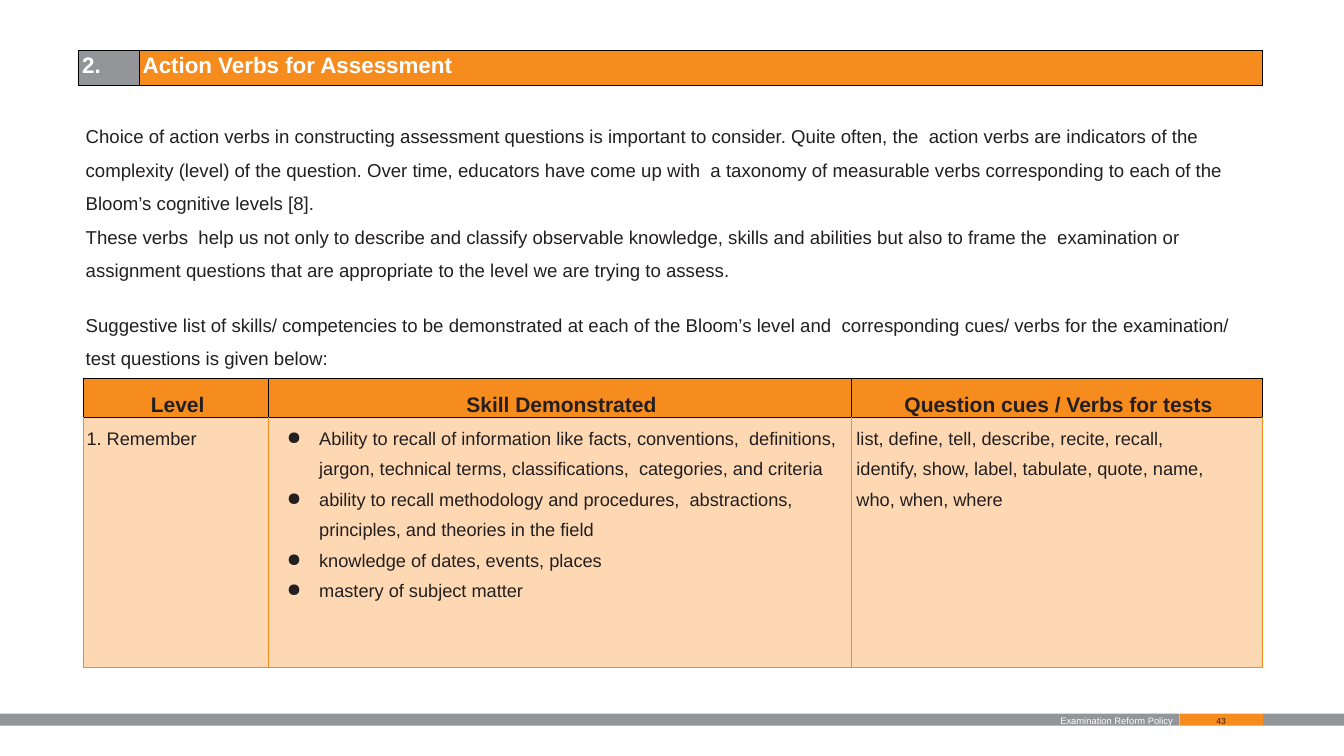
from lxml import etree
from pptx import Presentation
from pptx.dml.color import RGBColor
from pptx.enum import shapes, text
from pptx.oxml import ns
from pptx.util import Pt

# Content
TITLE = ["2.", "Action Verbs for Assessment"]
INTRO = [
    "Choice of action verbs in constructing assessment questions is important to consider. "
    "Quite often, the  action verbs are indicators of the complexity (level) of the question. "
    "Over time, educators have come up with  a taxonomy of measurable verbs corresponding to "
    "each of the Bloom’s cognitive levels [8].",
    "These verbs  help us not only to describe and classify observable knowledge, skills and "
    "abilities but also to frame the  examination or assignment questions that are appropriate "
    "to the level we are trying to assess.",
    "Suggestive list of skills/ competencies to be demonstrated at each of the Bloom’s level and "
    " corresponding cues/ verbs for the examination/ test questions is given below:",
]
HEADERS = ["Level", "Skill Demonstrated", "Question cues / Verbs for tests"]
LEVEL = ["1. Remember"]
SKILLS = [
    "Ability to recall of information like facts, conventions,  definitions, jargon, "
    "technical terms, classifications,  categories, and criteria",
    "ability to recall methodology and procedures,  abstractions, principles, and theories "
    "in the field",
    "knowledge of dates, events, places",
    "mastery of subject matter",
]
CUES = [
    "list, define, tell, describe, recite, recall,",
    "identify, show, label, tabulate, quote, name,",
    "who, when, where",
]
FOOTER, PAGE = "Examination Reform Policy", "43"

ORANGE = RGBColor(0xF6, 0x8B, 0x1E)
PEACH = RGBColor(0xFE, 0xD8, 0xB3)
GREY = RGBColor(0x93, 0x95, 0x98)
INK = RGBColor(0x23, 0x1F, 0x20)
WHITE = RGBColor(0xFF, 0xFF, 0xFF)
BLACK = RGBColor(0, 0, 0)

# Layout, in points
WIDTH, HEIGHT = 960, 540
RIGHT = 902
PAGE_X, BAR_Y, BAR_H = 842.5, 509.8, 8.6
LEFT, ALIGN = 59.8, text.PP_ALIGN

prs = Presentation()
prs.slide_width, prs.slide_height = Pt(WIDTH), Pt(HEIGHT)
s = prs.slides.add_slide(prs.slide_layouts[6])


def write(tf, lines, size, color, bold=False, font="Arial", align=ALIGN.LEFT,
          spacing=1.0, margin=0, hang=0, bullet=None):
    tf.word_wrap = True
    for i, line in enumerate(lines):
        p = tf.paragraphs[0] if i == 0 else tf.add_paragraph()
        p.text, p.alignment, p.line_spacing = line, align, spacing
        f = p.font
        f.name, f.size, f.bold = font, Pt(size), bold
        f.color.rgb = color
        pPr = p._p.get_or_add_pPr()
        pPr.set("marL", str(Pt(margin)))
        pPr.set("indent", str(Pt(-hang)))
        if bullet:
            mark = etree.Element(ns.qn("a:buChar"), char=bullet)
            pPr.insert_element_before(mark, "a:tabLst", "a:defRPr", "a:extLst")


def add_text(x, y, w, h, lines, size, color, top=0, anchor=text.MSO_ANCHOR.MIDDLE, **style):
    tf = s.shapes.add_textbox(Pt(x), Pt(y), Pt(w), Pt(h)).text_frame
    tf.margin_left = tf.margin_right = tf.margin_bottom = 0
    tf.margin_top = Pt(top)
    tf.vertical_anchor = anchor
    write(tf, lines, size, color, **style)
    return tf


def add_table(x, y, widths, heights):
    frame = s.shapes.add_table(len(heights), len(widths), Pt(x), Pt(y),
                               Pt(sum(widths)), Pt(sum(heights)))
    table = frame.table
    table.first_row = table.horz_banding = False
    for column, w in zip(table.columns, widths):
        column.width = Pt(w)
    for row, h in zip(table.rows, heights):
        row.height = Pt(h)
    return table


def fill_cell(cell, lines, size, color, fill, borders, top,
              anchor=text.MSO_ANCHOR.TOP, **style):
    cell.margin_left = cell.margin_right = cell.margin_bottom = 0
    cell.margin_top = Pt(top)
    cell.vertical_anchor = anchor
    cell.fill.solid()
    cell.fill.fore_color.rgb = fill
    write(cell.text_frame, lines, size, color, **style)
    tcPr = cell._tc.get_or_add_tcPr()
    for i, (side, line_color) in enumerate(zip("LRTB", borders)):
        ln = etree.Element(ns.qn("a:ln" + side), w=str(Pt(0.75)))
        solid = etree.SubElement(ln, ns.qn("a:solidFill"))
        etree.SubElement(solid, ns.qn("a:srgbClr"), val=str(line_color))
        tcPr.insert(i, ln)


# Footer bar
for x, end, color in [(0, PAGE_X, GREY), (RIGHT, WIDTH, GREY), (PAGE_X, RIGHT, ORANGE)]:
    sp = s.shapes.add_shape(shapes.MSO_SHAPE.RECTANGLE, Pt(x), Pt(BAR_Y), Pt(end - x), Pt(BAR_H))
    sp.shadow.inherit = False
    sp.fill.solid()
    sp.fill.fore_color.rgb = color
    sp.line.fill.background()
add_text(PAGE_X, BAR_Y, RIGHT - PAGE_X, BAR_H, [PAGE], 6.7, INK, font="Calibri",
         align=ALIGN.CENTER, spacing=1.14, anchor=text.MSO_ANCHOR.TOP)
add_text(670, BAR_Y, 168, BAR_H, [FOOTER], 6.7, WHITE, top=1.2, align=ALIGN.RIGHT)

# Verb table
verbs = add_table(LEFT, 270, [132.2, 416.2, 293.8], [28.1, 178.6])
for c, header in enumerate(HEADERS):
    fill_cell(verbs.cell(0, c), [header], 15, INK, ORANGE, [BLACK] * 4, 1.4,
              anchor=text.MSO_ANCHOR.MIDDLE, bold=True, align=ALIGN.CENTER,
              spacing=1.5, margin=2)
body = [
    (LEVEL, dict(margin=2)),
    (SKILLS, dict(margin=36, hang=23, bullet="●")),
    (CUES, dict(margin=3.6, align=ALIGN.JUSTIFY)),
]
for c, (lines, style) in enumerate(body):
    fill_cell(verbs.cell(1, c), lines, 13, INK, PEACH, [ORANGE, ORANGE, BLACK, ORANGE], 0.7,
              spacing=1.5, **style)

# Title strip
title = add_table(56.2, 36, [43.2, 802.6], [25.2])
for c, (line, fill) in enumerate(zip(TITLE, [GREY, ORANGE])):
    fill_cell(title.cell(0, c), [line], 16, WHITE, fill, [BLACK] * 4, 2.2,
              bold=True, margin=2.5)

# Introduction
intro = add_text(LEFT, 80.6, 834.5, 182.9, INTRO, 13.3, INK, top=1.4, spacing=1.5, margin=1.4)
intro.paragraphs[-1].space_before = Pt(15.1)

prs.save("out.pptx")
